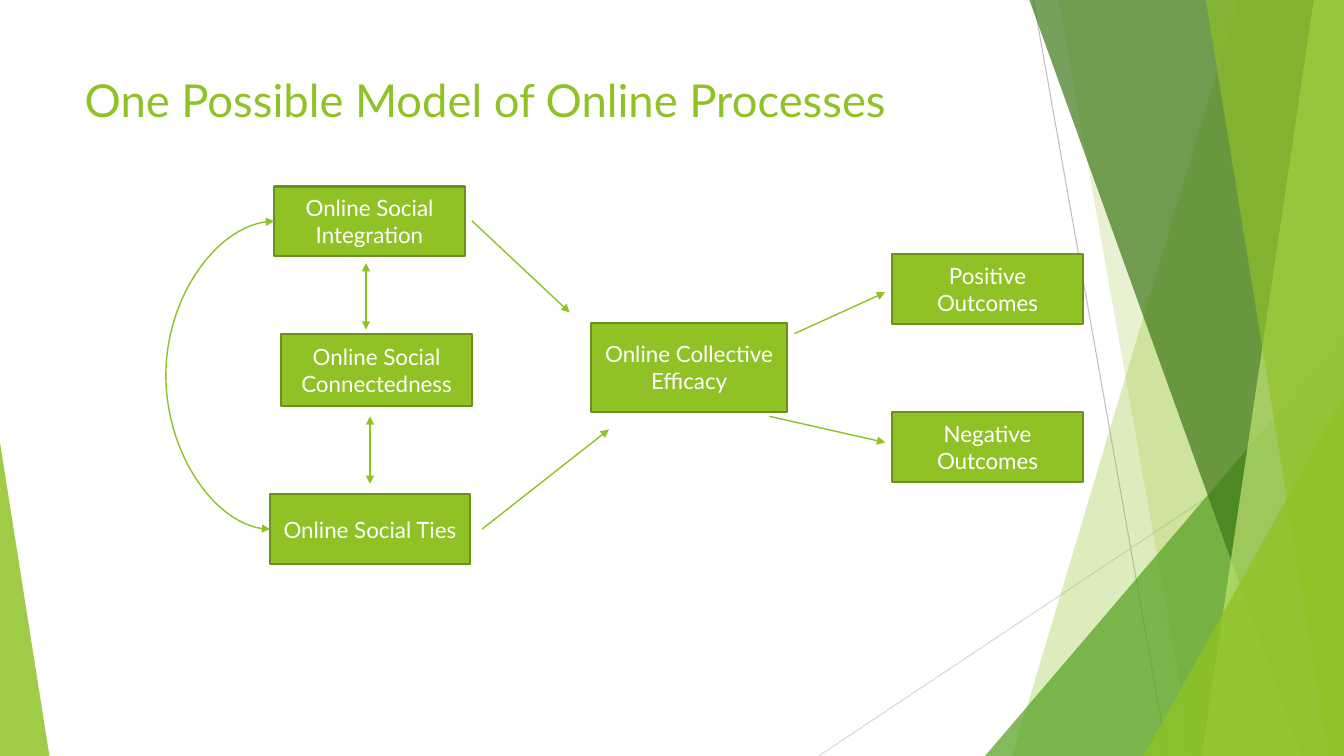
import pptx
import pptx.dml.color
import pptx.enum.shapes
import pptx.enum.text
import pptx.oxml
import pptx.oxml.ns
import pptx.util
import lxml.etree

COLUMNS, ROWS = 13.33, 7.5
FONT = "Lato"
COLORS = {
    "lime": "90C226", "edge": "6B901C", "green": "54A021", "forest": "3F7819",
    "pale": "C0E474", "gray": "BFBFBF", "silver": "D9D9D9", "white": "FFFFFF",
}
SHAPES = pptx.enum.shapes.MSO_SHAPE
CONNECTORS = pptx.enum.shapes.MSO_CONNECTOR

CONCEPTS = {
    "Online Social Connectedness": (0.11, 1.46, 1.89, 0.72),
    "Online Social Integration": (0.04, 0, 1.89, 0.69),
    "Online Social Ties": (0, 3.05, 1.98, 0.7),
    "Online Collective Efficacy": (3.18, 1.35, 1.95, 0.89),
    "Positive Outcomes": (6.17, 0.67, 1.89, 0.69),
    "Negative Outcomes": (6.17, 2.24, 1.89, 0.69),
}
MUTUAL_LINKS = [((0.95, 0.76), (0.95, 1.42)), ((0.99, 2.28), (0.99, 2.95))]
EFFECTS = [
    ((5.2, 1.46), (6.1, 1.05)),
    ((4.95, 2.28), (6.1, 2.54)),
    ((2, 0.34), (2.97, 1.25)),
    ((2.1, 3.4), (3.36, 2.41)),
]
BULGE = 1.07


def rgb(name):
    return pptx.dml.color.RGBColor.from_string(COLORS[name])


def inches(*lengths):
    return [pptx.util.Inches(length) for length in lengths]


def add_child(parent, tag, **attributes):
    child = lxml.etree.SubElement(parent, pptx.oxml.ns.qn(tag))
    for key, value in attributes.items():
        child.set(key, str(value))
    return child


def style_text(frame, size, color):
    for paragraph in frame.paragraphs:
        for run in paragraph.runs:
            run.font.name = FONT
            run.font.size = pptx.util.Pt(size)
            run.font.color.rgb = rgb(color)


def paint(facet, color, opacity):
    facet.shadow.inherit = False
    facet.line.fill.background()
    facet.fill.solid()
    facet.fill.fore_color.rgb = rgb(color)
    tint = facet.fill._xPr.find(".//" + pptx.oxml.ns.qn("a:srgbClr"))
    add_child(tint, "a:alpha", val=opacity * 1000)


def add_line(slide, box, start, end, color, width, heads=(), kind=CONNECTORS.STRAIGHT):
    left, top = box[:2]
    line = slide.shapes.add_connector(
        kind, *inches(left + start[0], top + start[1], left + end[0], top + end[1]))
    line.line.color.rgb = rgb(color)
    line.line.width = pptx.util.Pt(width)
    for head in heads:
        add_child(line.line._get_or_add_ln(), head, type="triangle")
    add_child(line._element.spPr, "a:effectLst")
    return line


def add_band(slide, box, top_column, bottom_column, color, opacity):
    left, top, width, height = box
    right, bottom = left + width, top + height
    builder = slide.shapes.build_freeform(*inches(left + top_column, top), scale=1.0)
    corners = [(right, top), (right, bottom), (left + bottom_column, bottom)]
    builder.add_line_segments([inches(*corner) for corner in corners], close=True)
    paint(builder.convert_to_shape(), color, opacity)


def add_corner(slide, box, width, height, apex, color, opacity):
    left, top, box_width, box_height = box
    corner = slide.shapes.add_shape(SHAPES.ISOSCELES_TRIANGLE, *inches(
        left + apex * (box_width - width), top + box_height - height, width, height))
    corner.adjustments[0] = apex
    paint(corner, color, opacity)


def draw_facets(slide, box):
    width, height = box[2:]
    add_line(slide, box, (2.13, 0), (3.46, height), "gray", 0.75)
    add_line(slide, box, (width, 4.03), (0, height), "silver", 0.75)
    add_band(slide, box, 4.16, 1.92, "lime", 30)
    add_band(slide, box, 2.38, 3.71, "lime", 20)
    add_corner(slide, box, 3.56, 4.17, 1, "green", 72)
    add_band(slide, box, 2.09, 4.79, "forest", 70)
    add_band(slide, box, 4.91, 3.8, "pale", 70)
    add_band(slide, box, 3.84, 5.06, "lime", 65)
    add_corner(slide, box, 1.99, 3.57, 1, "lime", 80)


def write_title(slide, box):
    title = slide.shapes.title
    title.left, title.top, title.width, title.height = inches(*box)
    frame = title.text_frame
    frame.text = "One Possible Model of Online Processes"
    frame.word_wrap = True
    frame.auto_size = pptx.enum.text.MSO_AUTO_SIZE.NONE
    frame.vertical_anchor = pptx.enum.text.MSO_ANCHOR.TOP
    frame.paragraphs[0].alignment = pptx.enum.text.PP_ALIGN.LEFT
    style_text(frame, 32.4, "lime")


def add_concept(slide, box, label, place):
    column, row, width, height = place
    concept = slide.shapes.add_shape(
        SHAPES.RECTANGLE, *inches(box[0] + column, box[1] + row, width, height))
    concept.shadow.inherit = False
    concept.fill.solid()
    concept.fill.fore_color.rgb = rgb("lime")
    concept.line.color.rgb = rgb("edge")
    concept.line.width = pptx.util.Pt(1.5)
    frame = concept.text_frame
    frame.text = label
    frame.word_wrap = True
    frame.vertical_anchor = pptx.enum.text.MSO_ANCHOR.MIDDLE
    frame.paragraphs[0].alignment = pptx.enum.text.PP_ALIGN.CENTER
    style_text(frame, 16, "white")
    return concept


def draw_model(slide, box):
    both_heads = ("a:headEnd", "a:tailEnd")
    concepts = {label: add_concept(slide, box, label, place)
                for label, place in CONCEPTS.items()}
    for start, end in MUTUAL_LINKS:
        add_line(slide, box, start, end, "lime", 1, both_heads)
    for start, end in EFFECTS:
        add_line(slide, box, start, end, "lime", 1, ("a:tailEnd",))

    loop = add_line(slide, box, (0.04, 0.34), (0, 3.4), "lime", 1, both_heads,
                    CONNECTORS.CURVE)
    loop.begin_connect(concepts["Online Social Integration"], 1)
    loop.end_connect(concepts["Online Social Ties"], 1)
    guides = loop._element.spPr.find(".//" + pptx.oxml.ns.qn("a:avLst"))
    bend = round(pptx.util.Inches(BULGE) / loop.width * 100000)
    add_child(guides, "a:gd", name="adj1", fmla=f"val {bend}")


def main():
    deck = pptx.Presentation()
    deck.slide_width, deck.slide_height = inches(COLUMNS, ROWS)
    slide = deck.slides.add_slide(deck.slide_layouts.get_by_name("Title Only"))
    draw_facets(slide, (8.12, 0, COLUMNS - 8.12, ROWS))
    add_corner(slide, (0, 0, COLUMNS, ROWS), 0.49, 3.11, 0, "lime", 85)
    write_title(slide, (0.74, 0.67, 9.4, 1.08))
    draw_model(slide, (2.68, 1.85, 8.06, 3.75))
    deck.save("out.pptx")


if __name__ == "__main__":
    main()
